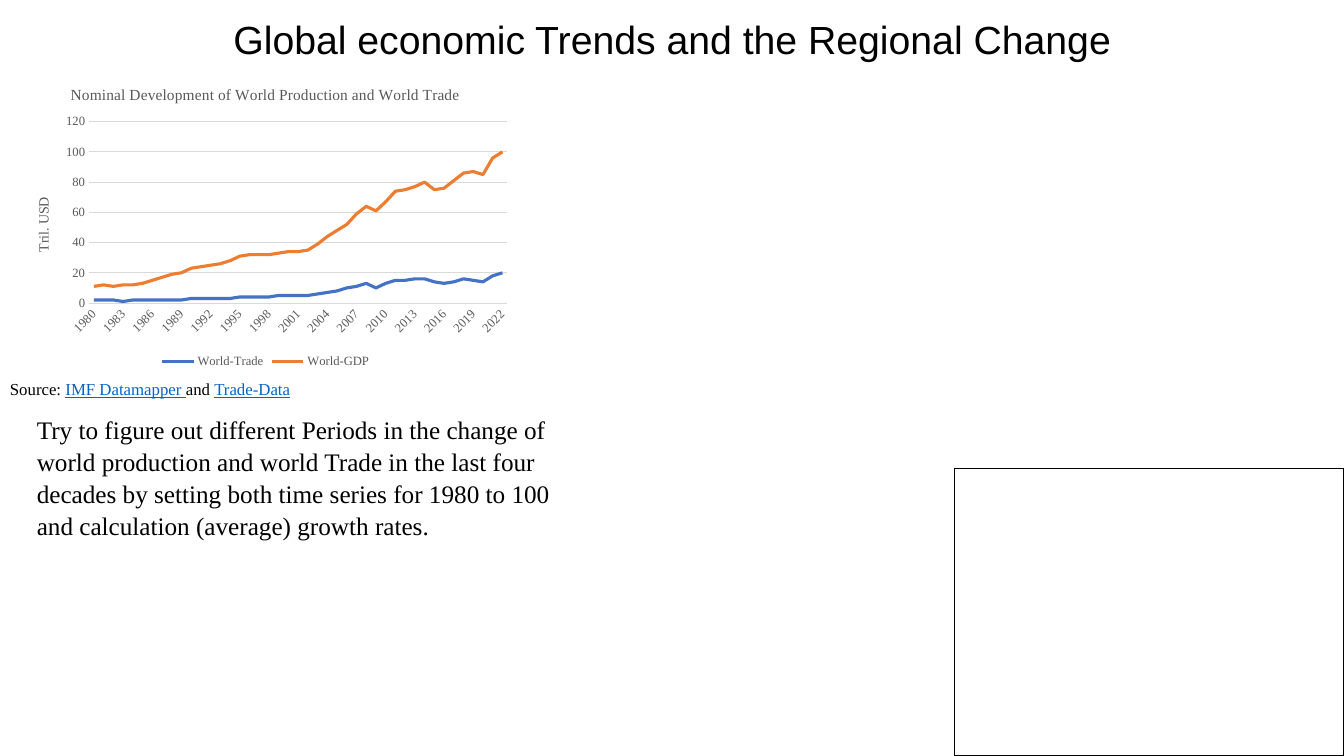
from lxml import etree
from pptx import Presentation
from pptx import util as u
from pptx.chart import data as cd
from pptx.dml.color import RGBColor
from pptx.enum import chart as ch, shapes, text

WIDE, HIGH = 13.33, 7.5
SERIF, GREY, PALE, BLUE = "Times New Roman", "595959", "D9D9D9", "0563C1"
C_NS = "http://schemas.openxmlformats.org/drawingml/2006/chart"
TRADE = [2, 2, 2, 1, 2, 2, 2, 2, 2, 2, 3, 3, 3, 3, 3, 4, 4, 4, 4, 5, 5, 5, 5, 6, 7,
         8, 10, 11, 13, 10, 13, 15, 15, 16, 16, 14, 13, 14, 16, 15, 14, 18, 20]
GDP = [11, 12, 11, 12, 12, 13, 15, 17, 19, 20, 23, 24, 25, 26, 28, 31, 32, 32, 32, 33,
       34, 34, 35, 39, 44, 48, 52, 59, 64, 61, 67, 74, 75, 77, 80, 75, 76, 81, 86, 87,
       85, 96, 100]
LINES = [("World-Trade", TRADE, "4472C4"), ("World-GDP", GDP, "ED7D31")]


def paint(code):
    """Turn a hex string into a colour."""
    return RGBColor.from_string(code)


def place(box):
    """Turn shares of the slide into lengths."""
    left, top, wide, high = box
    return [u.Inches(n) for n in (left * WIDE, top * HIGH, wide * WIDE, high * HIGH)]


def style(font, size, color=GREY, face=SERIF, line=None):
    """Set size, colour, face and underline of a font."""
    font.size, font.name, font.bold = u.Pt(size), face, False
    font.color.rgb = paint(color)
    font.underline = line


def write(slide, box, parts, size, face=SERIF, align=text.PP_ALIGN.LEFT, pitch=1.0, inset=0.05):
    """Write one paragraph of plain and linked-looking parts in a box."""
    frame = slide.shapes.add_textbox(*place(box)).text_frame
    frame.word_wrap = True
    frame.margin_top = u.Inches(inset)
    para = frame.paragraphs[0]
    para.alignment, para.line_spacing = align, pitch
    for words, marked in parts:
        run = para.add_run()
        run.text = words
        style(run.font, size, BLUE if marked else "000000", face, marked or None)


def label(owner, words, size):
    """Put a title on a chart or an axis."""
    owner.has_title = True
    frame = (owner.chart_title if hasattr(owner, "chart_title") else owner.axis_title).text_frame
    frame.text = words
    style(frame.paragraphs[0].runs[0].font, size)


def node(parent, tag, value=None):
    """Add a chart element with a value."""
    item = etree.SubElement(parent, f"{{{C_NS}}}{tag}")
    if value is not None:
        item.set("val", str(value))
    return item


def frame_plot(chart, box):
    """Fix the inner plot area to shares of the chart."""
    area = chart.element.find(f".//{{{C_NS}}}plotArea")
    for old in area.findall(f"{{{C_NS}}}layout"):
        area.remove(old)
    layout = node(area, "layout")
    area.insert(0, layout)
    inner = node(layout, "manualLayout")
    for tag, value in [("layoutTarget", "inner"), ("xMode", "edge"), ("yMode", "edge"),
                       *zip("xywh", box)]:
        node(inner, tag, value)


def years_axis(axis):
    """Show every third year, slanted."""
    axis.format.line.color.rgb = paint(PALE)
    axis.format.line.width = u.Pt(0.75)
    body = axis.tick_labels.font._element.getparent().getparent().getparent().find(
        "{http://schemas.openxmlformats.org/drawingml/2006/main}bodyPr")
    body.set("rot", "-2700000")
    last = axis._element.find(f"{{{C_NS}}}noMultiLvlLbl")
    for tag in ("tickLblSkip", "tickMarkSkip"):
        skip = node(axis._element, tag, 3)
        if last is not None:
            last.addprevious(skip)


def value_axis(axis):
    """Scale the trillions and draw pale grid lines."""
    axis.minimum_scale, axis.maximum_scale, axis.major_unit = 0, 120, 20
    axis.format.line.fill.background()
    axis.has_major_gridlines = True
    grid = axis.major_gridlines.format.line
    grid.color.rgb, grid.width = paint(PALE), u.Pt(0.75)
    axis.tick_labels.number_format = "0"
    axis.tick_labels.number_format_is_linked = False
    label(axis, "Tril. USD", 10)


def trend(slide, box):
    """Draw the line chart of production and trade."""
    data = cd.CategoryChartData(number_format="0")
    data.categories = [str(year) for year in range(1980, 2023)]
    for name, vals, _ in LINES:
        data.add_series(name, vals)
    chart = slide.shapes.add_chart(ch.XL_CHART_TYPE.LINE, *place(box), data).chart
    style(chart.font, 10, "000000")
    label(chart, "Nominal Development of World Production and World Trade", 11)
    chart.plots[0].vary_by_categories = False
    for line, (_, _, color) in zip(chart.plots[0].series, LINES):
        line.smooth = False
        line.marker.style = ch.XL_MARKER_STYLE.NONE
        line.format.line.color.rgb = paint(color)
        line.format.line.width = u.Pt(2.25)
    for axis in (chart.category_axis, chart.value_axis):
        axis.major_tick_mark = axis.minor_tick_mark = ch.XL_TICK_MARK.NONE
        style(axis.tick_labels.font, 9)
    years_axis(chart.category_axis)
    value_axis(chart.value_axis)
    chart.has_legend = True
    chart.legend.position = ch.XL_LEGEND_POSITION.BOTTOM
    chart.legend.include_in_layout = False
    style(chart.legend.font, 9)
    frame_plot(chart, (0.15, 0.17, 0.83, 0.6))


def panel(slide, box):
    """Draw the empty outlined panel."""
    rect = slide.shapes.add_shape(shapes.MSO_SHAPE.RECTANGLE, *place(box))
    rect.shadow.inherit = False
    rect.fill.background()
    rect.line.color.rgb, rect.line.width = paint("000000"), u.Pt(1)


def main():
    """Build and save the slide."""
    deck = Presentation()
    deck.slide_width, deck.slide_height = u.Inches(WIDE), u.Inches(HIGH)
    slide = deck.slides.add_slide(deck.slide_layouts[6])
    write(slide, (0, 0.01, 1, 0.09), [("Global economic Trends and the Regional Change", False)],
          28, "Arial", text.PP_ALIGN.CENTER, inset=0.08)
    panel(slide, (0.71, 0.62, 0.29, 0.38))
    write(slide, (0.02, 0.54, 0.42, 0.17),
          [("Try to figure out different Periods in the change of world production and world "
            "Trade in the last four decades by setting both time series for 1980 to 100 and "
            "calculation (average) growth rates.", False)], 18, pitch=1.05)
    trend(slide, (0.01, 0.093, 0.375, 0.4))
    write(slide, (0, 0.495, 0.23, 0.04),
          [("Source: ", False), ("IMF Datamapper ", True), ("and ", False),
           ("Trade-Data", True)], 12)
    deck.save("out.pptx")


if __name__ == "__main__":
    main()
